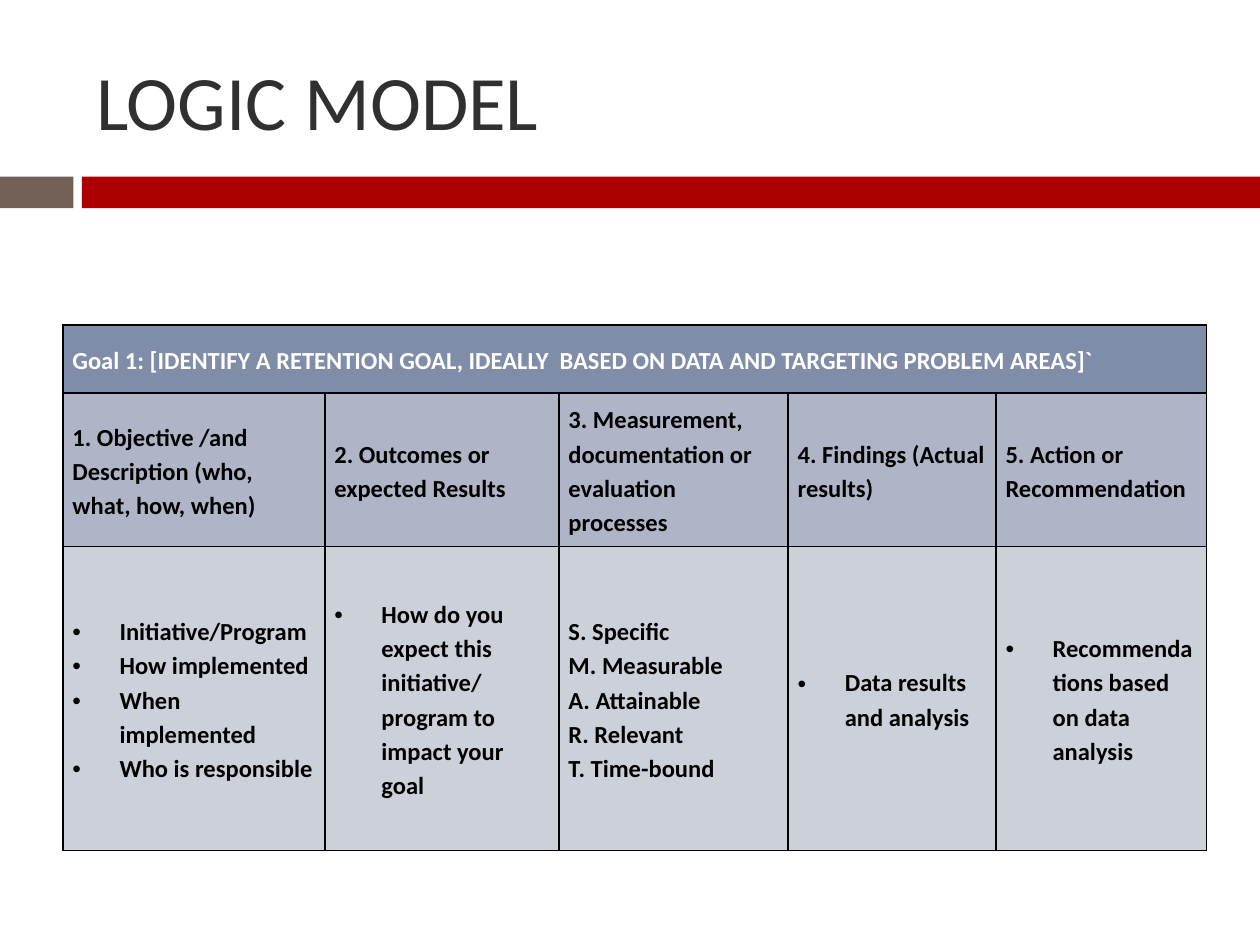
from lxml.etree import SubElement
from pptx import Presentation
from pptx.dml.color import RGBColor
from pptx.enum.shapes import MSO_SHAPE
from pptx.enum.text import MSO_ANCHOR
from pptx.oxml.ns import qn
from pptx.util import Cm, Pt

FONT = "Calibri"
BLACK = RGBColor(0x00, 0x00, 0x00)
WHITE = RGBColor(0xFF, 0xFF, 0xFF)
CHARCOAL = RGBColor(0x30, 0x30, 0x30)
TAUPE = RGBColor(0x72, 0x60, 0x56)
RED = RGBColor(0xAD, 0x01, 0x01)
GOAL_BLUE = RGBColor(0x80, 0x8D, 0xA9)
HEADING_BLUE = RGBColor(0xAF, 0xB5, 0xC7)
DETAIL_GREY = RGBColor(0xCC, 0xD0, 0xD9)

COLUMN_WIDTHS = [5.28, 4.72, 4.62, 4.19, 4.24]
ROW_HEIGHTS = [1.37, 3.1, 6.12]
BULLET_INDENT = Cm(0.95)

GOAL = ("Goal 1: [IDENTIFY A RETENTION GOAL, IDEALLY  BASED ON DATA "
        "AND TARGETING PROBLEM AREAS]`")
# Heading, detail lines, whether the details are bulleted
STEPS = [
    ("1. Objective /and Description (who, what, how, when)",
     ["Initiative/Program", "How implemented", "When implemented",
      "Who is responsible"], True),
    ("2. Outcomes or expected Results",
     ["How do you expect this initiative/ program to impact your goal"], True),
    ("3. Measurement, documentation or evaluation processes",
     ["S. Specific", "M. Measurable", "A. Attainable", "R. Relevant",
      "T. Time-bound"], False),
    ("4. Findings (Actual results)", ["Data results and analysis"], True),
    ("5. Action or Recommendation",
     ["Recommendations based on data analysis"], True),
]


def set_font(paragraph, size, color, bold=False):
    font = paragraph.font
    font.name, font.size, font.bold = FONT, Pt(size), bold
    font.color.rgb = color


def add_band(slide, left, width, color):
    band = slide.shapes.add_shape(
        MSO_SHAPE.RECTANGLE, Cm(left), Cm(3.56), Cm(width), Cm(0.64))
    band.shadow.inherit = False
    band.fill.solid()
    band.fill.fore_color.rgb = color
    band.line.fill.background()


def add_title(slide, text):
    title = slide.shapes.add_textbox(Cm(1.69), Cm(0.64), Cm(22.66), Cm(2.74))
    frame = title.text_frame
    frame.word_wrap = True
    frame.vertical_anchor = MSO_ANCHOR.MIDDLE
    frame.text = text
    set_font(frame.paragraphs[0], 44, CHARCOAL)


def add_borders(cell):
    properties = cell._tc.get_or_add_tcPr()
    for side in ("a:lnL", "a:lnR", "a:lnT", "a:lnB"):
        line = SubElement(properties, qn(side), w=str(Pt(1)))
        fill = SubElement(line, qn("a:solidFill"))
        SubElement(fill, qn("a:srgbClr"), val=str(BLACK))


def add_bullet(paragraph):
    properties = paragraph._p.get_or_add_pPr()
    properties.set("marL", str(BULLET_INDENT))
    properties.set("indent", str(-BULLET_INDENT))
    SubElement(properties, qn("a:buFont"), typeface="Arial")
    SubElement(properties, qn("a:buChar"), char="•")


def style_cell(cell, fill_color):
    add_borders(cell)
    cell.fill.solid()
    cell.fill.fore_color.rgb = fill_color
    cell.vertical_anchor = MSO_ANCHOR.MIDDLE
    cell.margin_left = cell.margin_right = Cm(0.19)
    cell.margin_top = cell.margin_bottom = 0


def write_cell(cell, lines, color=BLACK, bulleted=False):
    cell.text_frame.text = "\n".join(lines)
    for paragraph in cell.text_frame.paragraphs:
        paragraph.line_spacing = 1.15
        if bulleted:
            add_bullet(paragraph)
        set_font(paragraph, 14, color, bold=True)


def add_logic_table(slide):
    table = slide.shapes.add_table(
        len(ROW_HEIGHTS), len(COLUMN_WIDTHS), Cm(1.27), Cm(6.55),
        Cm(sum(COLUMN_WIDTHS)), Cm(sum(ROW_HEIGHTS))).table
    table.first_row = table.horz_banding = False
    for column, width in zip(table.columns, COLUMN_WIDTHS):
        column.width = Cm(width)
    row_fills = (GOAL_BLUE, HEADING_BLUE, DETAIL_GREY)
    for row, height, fill_color in zip(table.rows, ROW_HEIGHTS, row_fills):
        row.height = Cm(height)
        for cell in row.cells:
            style_cell(cell, fill_color)

    goal_cell = table.cell(0, 0)
    goal_cell.merge(table.cell(0, len(COLUMN_WIDTHS) - 1))
    write_cell(goal_cell, [GOAL], WHITE)
    for index, (heading, details, bulleted) in enumerate(STEPS):
        write_cell(table.cell(1, index), [heading])
        write_cell(table.cell(2, index), details, bulleted=bulleted)


def main():
    deck = Presentation()
    deck.slide_width, deck.slide_height = Cm(25.4), Cm(19.05)
    slide = deck.slides.add_slide(deck.slide_layouts[6])
    add_band(slide, 0, 1.48, TAUPE)
    add_band(slide, 1.65, 23.75, RED)
    add_title(slide, "LOGIC MODEL")
    add_logic_table(slide)
    deck.save("out.pptx")


if __name__ == "__main__":
    main()
